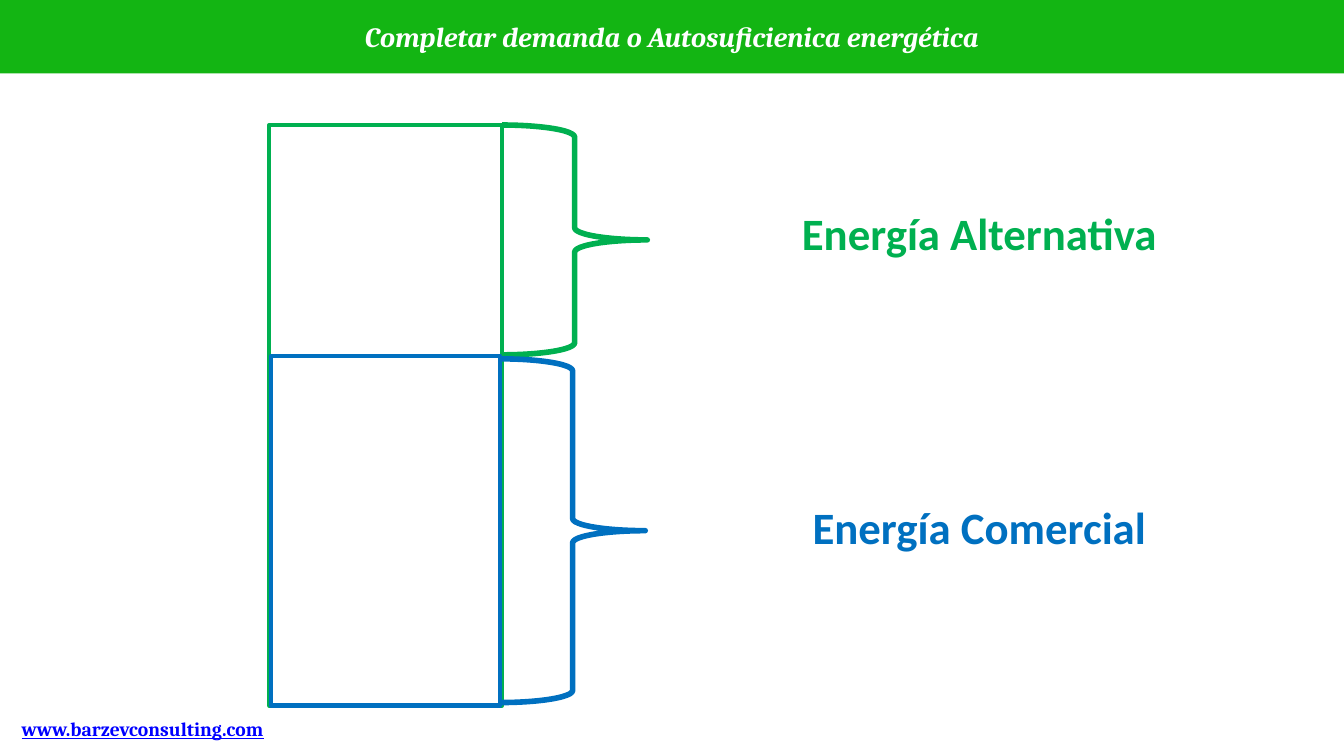
from pptx import Presentation
from pptx.dml.color import RGBColor
from pptx.enum.shapes import MSO_SHAPE as SHAPE
from pptx.enum.text import MSO_ANCHOR as ANCHOR, PP_ALIGN as ALIGN
from pptx.util import Inches, Pt

COLORS = {
    "banner": "13B513",
    "green": "00B050",
    "blue": "0070C0",
    "link": "0000FF",
    "white": "FFFFFF",
}
WIDTH, HEIGHT = 13.33, 7.5


def rgb(name):
    return RGBColor.from_string(COLORS[name])


def add_shape(s, kind, box, fill=None, line=None, weight=0):
    sp = s.shapes.add_shape(kind, *map(Inches, box))
    sp.shadow.inherit = False
    if fill:
        sp.fill.solid()
        sp.fill.fore_color.rgb = rgb(fill)
    else:
        sp.fill.background()
    if line:
        sp.line.color.rgb = rgb(line)
        sp.line.width = Pt(weight)
    else:
        sp.line.fill.background()
    return sp


def write(sp, text, font, size, color, anchor=ANCHOR.TOP):
    tf = sp.text_frame
    tf.word_wrap = True
    tf.vertical_anchor = anchor
    p = tf.paragraphs[0]
    p.text = text
    p.alignment = ALIGN.CENTER
    r = p.runs[0]
    r.font.name, r.font.size, r.font.bold = font, Pt(size), True
    r.font.color.rgb = rgb(color)
    return r


def add_footer(s, box):
    sp = add_shape(s, SHAPE.RECTANGLE, box, fill="white")
    r = write(sp, "www.barzevconsulting.com", "Cambria", 14, "link")
    r.font.underline = True


def add_banner(s, box):
    sp = add_shape(s, SHAPE.RECTANGLE, box, fill="banner")
    r = write(sp, "Completar demanda o Autosuficienica energética",
              "Cambria", 20, "white", ANCHOR.MIDDLE)
    r.font.italic = True


def add_source(s, box, brace_top, brace_height, label_top, label, color):
    """Draw one energy source: its bar, the brace beside it and its label."""
    left, top, width, height = box
    add_shape(s, SHAPE.RECTANGLE, box, line=color, weight=3)
    brace = (left + width, top + brace_top, 1.44, brace_height)
    add_shape(s, SHAPE.RIGHT_BRACE, brace, line=color, weight=4)
    label_box = (6.93, top + label_top, 5.57, 0.64)
    tb = s.shapes.add_textbox(*map(Inches, label_box))
    write(tb, label, "Calibri", 32, color)


def main():
    prs = Presentation()
    prs.slide_width, prs.slide_height = Inches(WIDTH), Inches(HEIGHT)
    s = prs.slides.add_slide(prs.slide_layouts[6])

    # Web address
    add_footer(s, (0.08, 7.06, 2.67, 0.34))

    # Total demand, with the commercial share in front of its lower part
    add_source(s, (2.67, 1.24, 2.31, 5.76), 0, 2.28, 0.75,
               "Energía Alternativa", "green")
    add_source(s, (2.69, 3.53, 2.27, 3.47), 0.03, 3.41, 1.38,
               "Energía Comercial", "blue")

    # Title
    add_banner(s, (0, 0, WIDTH, 0.73))

    prs.save("out.pptx")


if __name__ == "__main__":
    main()
